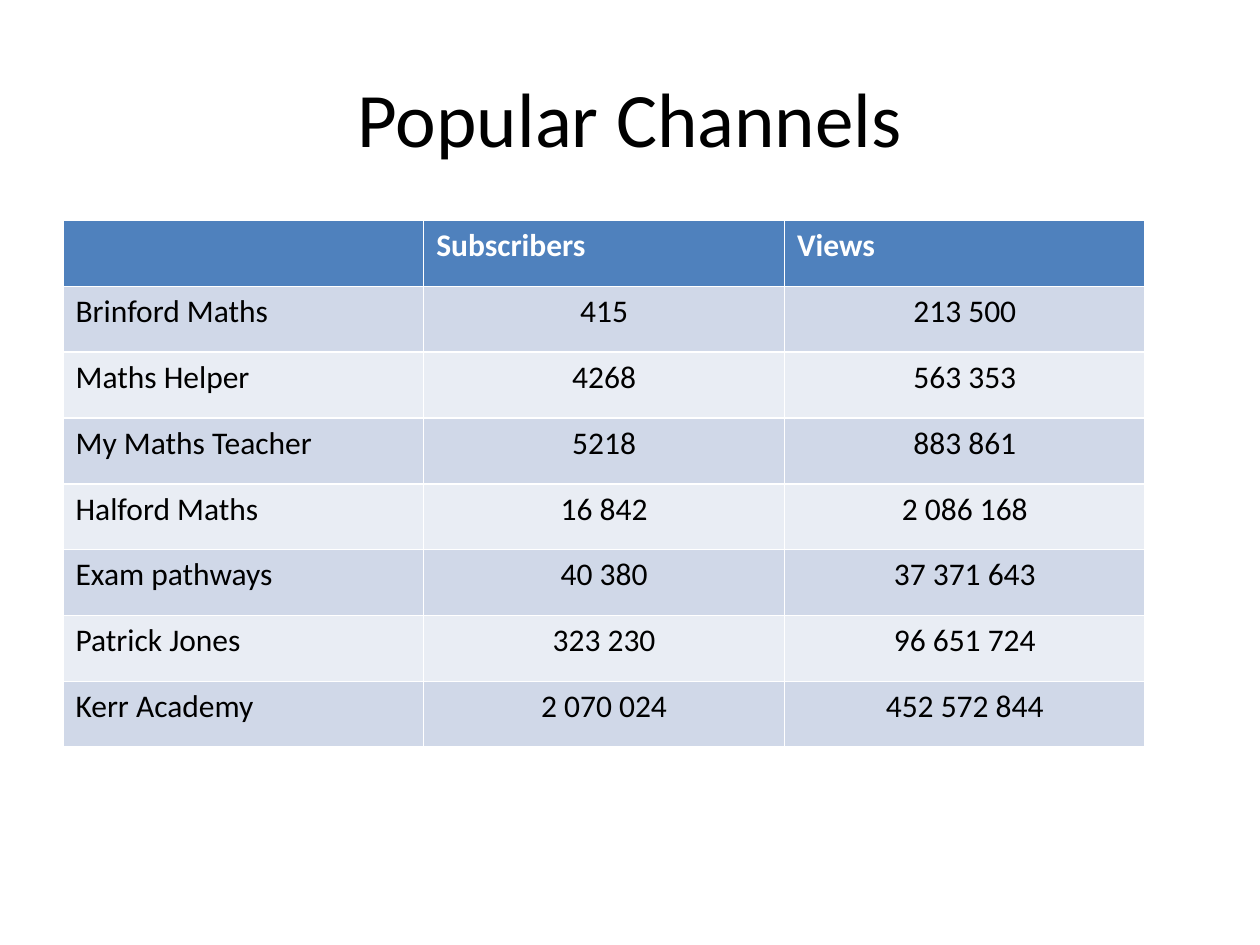
"""Build a slide with a table of popular maths channels."""
from pptx import Presentation
from pptx.dml.color import RGBColor
from pptx.enum.text import MSO_ANCHOR, PP_ALIGN
from pptx.util import Inches, Pt

TITLE = "Popular Channels"
HEADER = ("", "Subscribers", "Views")
CHANNELS = [
    ("Brinford Maths", "415", "213 500"),
    ("Maths Helper", "4268", "563 353"),
    ("My Maths Teacher", "5218", "883 861"),
    ("Halford Maths", "16 842", "2 086 168"),
    ("Exam pathways", "40 380", "37 371 643"),
    ("Patrick Jones", "323 230", "96 651 724"),
    ("Kerr Academy", "2 070 024", "452 572 844"),
]
COLORS = {
    "header": "4F81BD",
    "odd": "D0D8E8",
    "even": "E9EDF4",
    "header_text": "FFFFFF",
    "text": "000000",
}
FONT = "Calibri"
TABLE_WIDTH, TABLE_HEIGHT = 8.59, 4.18


def style(paragraph, size, color, align, bold=False):
    paragraph.alignment = align
    paragraph.font.name = FONT
    paragraph.font.size = Pt(size)
    paragraph.font.bold = bold
    paragraph.font.color.rgb = RGBColor.from_string(COLORS[color])


def add_title(slide):
    frame = slide.shapes.add_textbox(
        Inches(0.5), Inches(0.3), Inches(9), Inches(1.25)
    ).text_frame
    frame.word_wrap = True
    frame.vertical_anchor = MSO_ANCHOR.MIDDLE
    frame.text = TITLE
    style(frame.paragraphs[0], 44, "text", PP_ALIGN.CENTER)


def add_channels(slide):
    rows = [HEADER, *CHANNELS]
    table = slide.shapes.add_table(
        len(rows), len(HEADER), Inches(0.5), Inches(1.75),
        Inches(TABLE_WIDTH), Inches(TABLE_HEIGHT),
    ).table
    for r, row in enumerate(rows):
        is_header = r == 0
        fill = "header" if is_header else "odd" if r % 2 else "even"
        color = "header_text" if is_header else "text"
        for c, value in enumerate(row):
            cell = table.cell(r, c)
            cell.fill.solid()
            cell.fill.fore_color.rgb = RGBColor.from_string(COLORS[fill])
            cell.text = value
            align = PP_ALIGN.LEFT if is_header or c == 0 else PP_ALIGN.CENTER
            style(cell.text_frame.paragraphs[0], 18, color, align, is_header)


def main():
    deck = Presentation()
    deck.slide_width, deck.slide_height = Inches(10), Inches(7.5)
    slide = deck.slides.add_slide(deck.slide_layouts[6])
    add_title(slide)
    add_channels(slide)
    deck.save("out.pptx")


if __name__ == "__main__":
    main()
